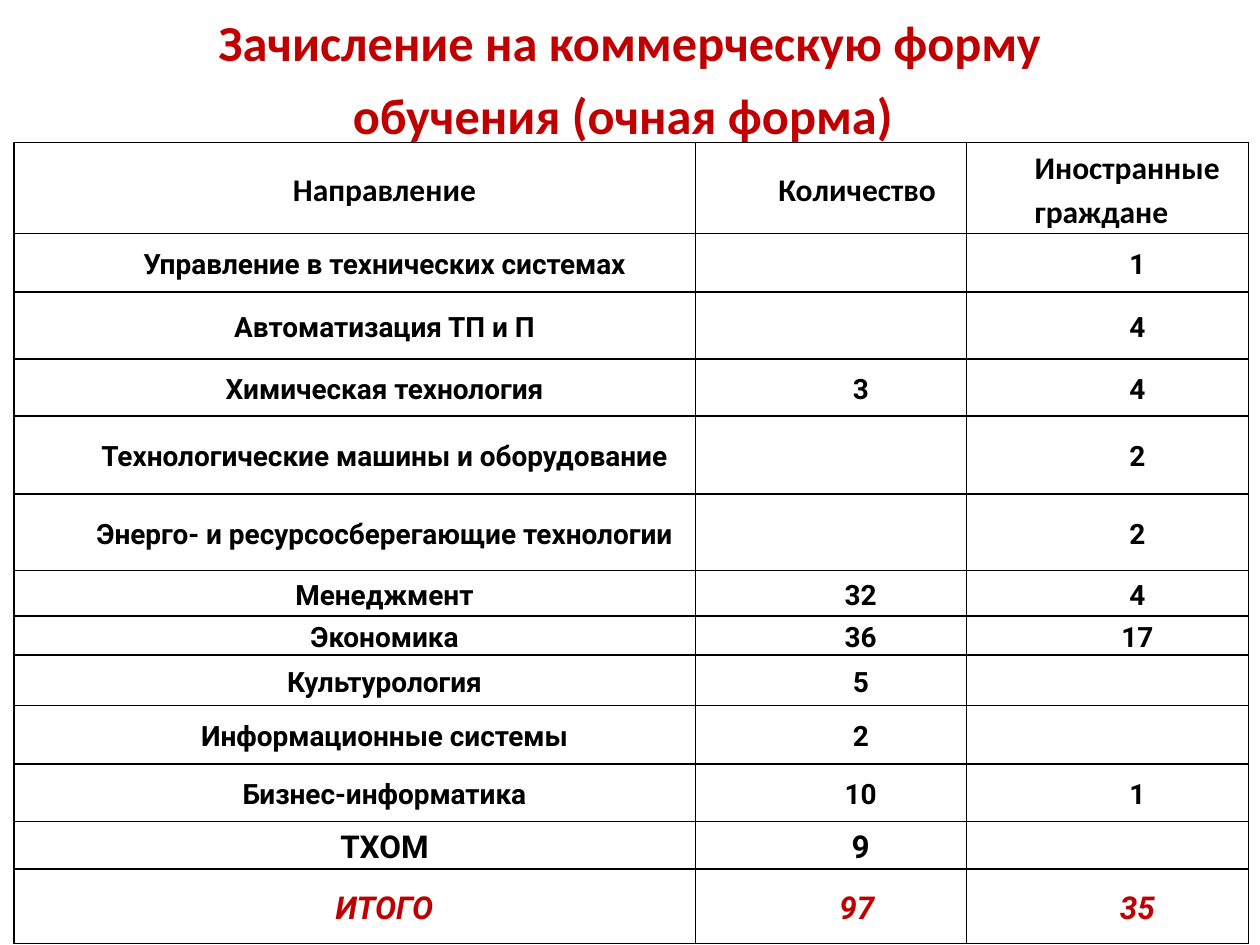
from pptx import Presentation
from pptx.dml.color import RGBColor
from pptx.enum.text import MSO_ANCHOR, MSO_AUTO_SIZE, PP_ALIGN
from pptx.oxml import parse_xml
from pptx.oxml.ns import nsdecls, qn
from pptx.util import Pt
from lxml.etree import SubElement

COLORS = {"accent": "C00000", "text": "000000", "border": "000000"}
FORMATS = {
    "title": {"name": "Calibri", "size": Pt(28.8), "bold": True, "color": "accent"},
    "title_end": {"name": "Calibri", "size": Pt(36), "bold": True, "color": "accent"},
    "header": {"name": "Calibri", "size": Pt(18), "bold": True, "color": "text"},
    "body": {"name": "Roboto", "size": Pt(16), "bold": True, "color": "text"},
    "large": {"name": "Roboto", "size": Pt(18), "bold": True, "color": "text"},
    "total": {"name": "Roboto", "size": Pt(18), "bold": True, "italic": True, "color": "accent"},
}
COLUMN_WIDTHS = [389.5, 154.8, 161.3]
ROWS = [
    (51.8, "header", ["Направление", "Количество ", "Иностранные граждане"]),
    (33.6, "body", ["Управление в технических системах", "", "1"]),
    (38.2, "body", ["Автоматизация ТП и П", "", "4"]),
    (32.6, "body", ["Химическая технология", "3", "4"]),
    (44.6, "body", ["Технологические машины и оборудование", "", "2"]),
    (43.9, "body", ["Энерго- и ресурсосберегающие технологии", "", "2"]),
    (25.8, "body", ["Менеджмент", "32", "4"]),
    (22.3, "body", ["Экономика", "36", "17"]),
    (29, "body", ["Культурология", "5", ""]),
    (33.3, "body", ["Информационные системы", "2", ""]),
    (33, "body", ["Бизнес-информатика", "10", "1"]),
    (27.2, "large", ["ТХОМ", "9", ""]),
    (42.6, "total", ["ИТОГО", "97 ", "35"]),
]


class SlideBuilder:
    """Holds the style and the current slide."""

    def __init__(self, page, colors, formats):
        self.page, self.colors, self.formats = page, colors, formats

    def add_span(self, para, text, style):
        span = para.add_run()
        span.text = text
        for key, value in self.formats[style].items():
            if key == "color":
                span.font.color.rgb = RGBColor.from_string(self.colors[value])
            else:
                setattr(span.font, key, value)

    def add_title(self, lines, left, top, width, height):
        box = self.page.shapes.title
        for key, value in zip(("left", "top", "width", "height"), (left, top, width, height)):
            setattr(box, key, Pt(value))
        frame = box.text_frame
        frame.auto_size = MSO_AUTO_SIZE.NONE
        frame.vertical_anchor = MSO_ANCHOR.MIDDLE
        para = frame.paragraphs[0]
        para.alignment = PP_ALIGN.CENTER
        for index, line in enumerate(lines):
            if index:
                para.add_line_break()
            self.add_span(para, line, "title")
        for line_break in para._p.findall(qn("a:br")):
            SubElement(line_break, qn("a:rPr")).set("sz", "2880")
        self.add_span(para, " ", "title_end")

    def add_borders(self, cell):
        properties = cell._tc.get_or_add_tcPr()
        for index, side in enumerate(("lnL", "lnR", "lnT", "lnB")):
            properties.insert(index, parse_xml(
                f'<a:{side} {nsdecls("a")} w="{Pt(1)}"><a:solidFill>'
                f'<a:srgbClr val="{self.colors["border"]}"/></a:solidFill></a:{side}>'))

    def fill_cell(self, cell, text, style, alignment):
        margins = {"margin_left": 5, "margin_right": 5, "margin_top": 0, "margin_bottom": 0}
        for key, value in margins.items():
            setattr(cell, key, Pt(value))
        cell.vertical_anchor = MSO_ANCHOR.MIDDLE
        cell.fill.background()
        self.add_borders(cell)
        if text:
            para = cell.text_frame.paragraphs[0]
            settings = {"alignment": alignment, "line_spacing": 1.15, "space_after": Pt(10)}
            for key, value in settings.items():
                setattr(para, key, value)
            para._p.get_or_add_pPr().set("marL", str(Pt(34)))
            self.add_span(para, text, style)

    def add_table(self, rows, widths, left, top):
        heights = [height for height, _, _ in rows]
        frame = self.page.shapes.add_table(
            len(rows), len(widths), Pt(left), Pt(top), Pt(sum(widths)), Pt(sum(heights)))
        table = frame.table
        table.first_row = table.horz_banding = False
        for column, width in zip(table.columns, widths):
            column.width = Pt(width)
        for row, (height, style, texts) in zip(table.rows, rows):
            row.height = Pt(height)
            for cell, text in zip(row.cells, texts):
                justified = style == "header" and text == texts[-1]
                alignment = PP_ALIGN.JUSTIFY if justified else PP_ALIGN.CENTER
                self.fill_cell(cell, text, style, alignment)


def main():
    deck = Presentation()
    deck.slide_width, deck.slide_height = Pt(720), Pt(540)
    page = deck.slides.add_slide(deck.slide_layouts[5])
    builder = SlideBuilder(page, COLORS, FORMATS)
    builder.add_title(
        ["Зачисление на коммерческую форму", "обучения (очная форма)"], 0, 0, 720, 90)
    builder.add_table(ROWS, COLUMN_WIDTHS, 8, 81.5)
    deck.save("out.pptx")


if __name__ == "__main__":
    main()
